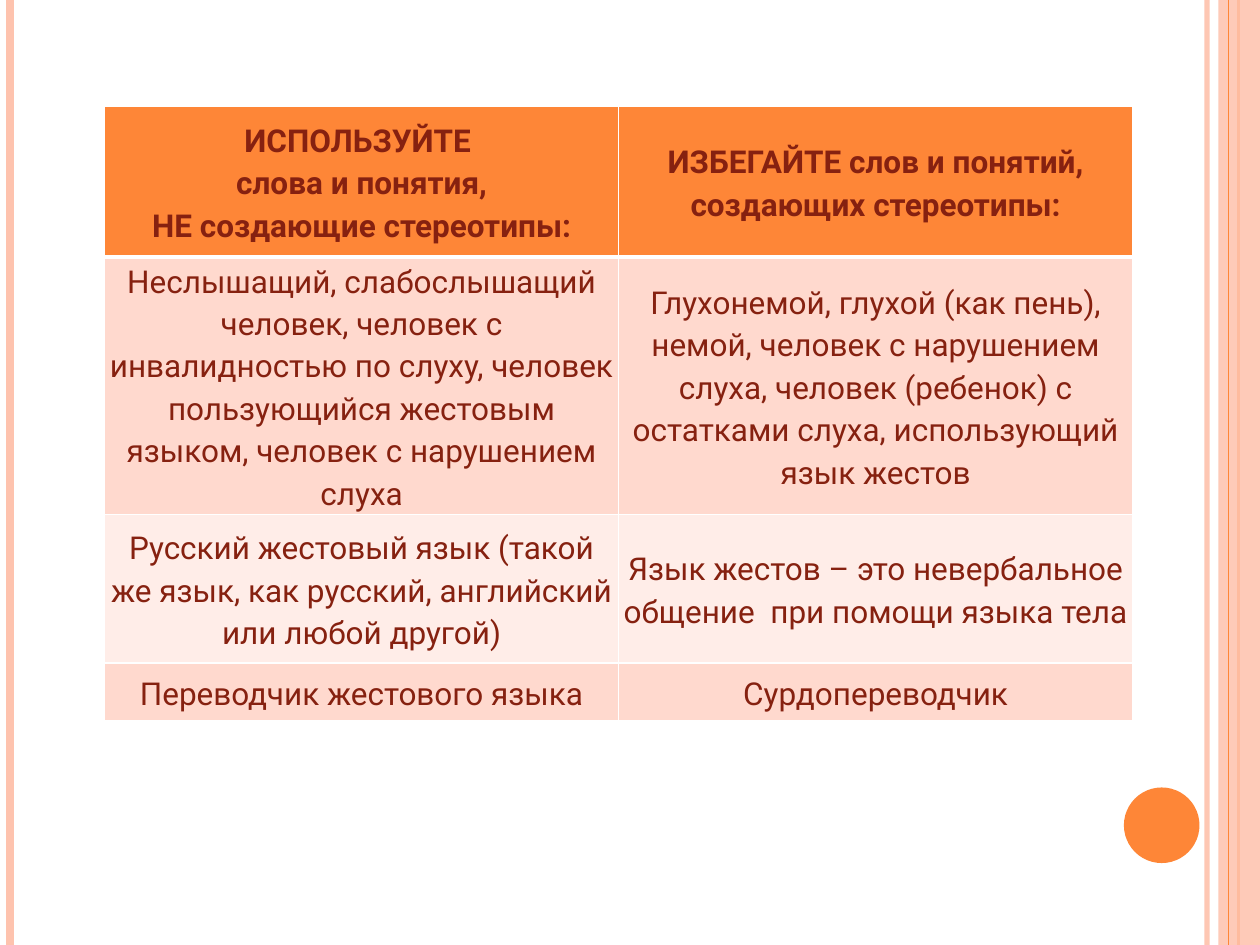
from lxml import etree
from pptx import Presentation
from pptx.dml.color import RGBColor
from pptx.enum.shapes import MSO_CONNECTOR, MSO_SHAPE
from pptx.enum.text import MSO_ANCHOR, PP_ALIGN
from pptx.oxml.ns import qn
from pptx.util import Inches, Pt

STRAIGHT = MSO_CONNECTOR.STRAIGHT
RECTANGLE = MSO_SHAPE.RECTANGLE
OVAL = MSO_SHAPE.OVAL
MIDDLE = MSO_ANCHOR.MIDDLE
CENTER = PP_ALIGN.CENTER

WIDTH, HEIGHT = 10, 7.5
COLORS = {
    "accent": "FE8637",
    "stripe": "FEC3AE",
    "text": "862110",
    "band": "FFD9CE",
    "pale": "FFEDE8",
    "border": "FFFFFF",
}
CELL_FORMAT = {
    "vertical_anchor": MIDDLE,
    "margin_left": Inches(0.01),
    "margin_right": Inches(0.01),
    "margin_top": Inches(0.01),
    "margin_bottom": Inches(0.01),
}
PARAGRAPH_FORMAT = {"alignment": CENTER, "line_spacing": 1.15}
FONT_FORMAT = {"name": "Roboto", "size": Pt(18)}

ROW_HEIGHTS = [1.2, 1.97, 1.18, 0.46]
ROW_FILLS = ["accent", "band", "pale", "band"]
ROWS = [
    (
        ["ИСПОЛЬЗУЙТЕ ", "слова и понятия,\nНЕ создающие стереотипы:"],
        ["ИЗБЕГАЙТЕ слов и понятий,\nсоздающих стереотипы:"],
    ),
    (
        ["Неслышащий, слабослышащий человек, человек с инвалидностью по слуху, "
         "человек пользующийся жестовым языком, человек с нарушением слуха"],
        ["Глухонемой, глухой (как пень), немой, человек с нарушением слуха, "
         "человек (ребенок) с остатками слуха, использующий язык жестов"],
    ),
    (
        ["Русский жестовый язык (такой же язык, как русский, английский или любой другой)"],
        ["Язык жестов – это невербальное общение  при помощи языка тела"],
    ),
    (["Переводчик жестового языка"], ["Сурдопереводчик"]),
]


def color(name):
    """Return the named palette colour."""
    return RGBColor.from_string(COLORS[name])


def apply_format(target, values):
    """Set every attribute of target from a dict."""
    for name, value in values.items():
        setattr(target, name, value)


def set_opacity(shape, percent):
    """Make the solid colours of a shape partly transparent."""
    for element in shape._element.spPr.iter(qn("a:srgbClr")):
        etree.SubElement(element, qn("a:alpha"), val=str(percent * 1000))


def add_stripe(slide, left, weight, color_name, opacity=100):
    """Draw a vertical line over the whole height of the slide."""
    line = slide.shapes.add_connector(
        STRAIGHT, Inches(left), 0, Inches(left), Inches(HEIGHT))
    line.line.color.rgb = color(color_name)
    line.line.width = Pt(weight)
    etree.SubElement(line._element.spPr, qn("a:effectLst"))
    if opacity < 100:
        set_opacity(line, opacity)


def add_block(slide, kind, box, color_name, opacity=100):
    """Draw a filled shape without outline."""
    shape = slide.shapes.add_shape(kind, *map(Inches, box))
    shape.shadow.inherit = False
    shape.fill.solid()
    shape.fill.fore_color.rgb = color(color_name)
    shape.line.fill.background()
    if opacity < 100:
        set_opacity(shape, opacity)


def set_borders(cell, weights):
    """Draw the cell borders, with weights in points by side."""
    properties = cell._tc.get_or_add_tcPr()
    for side, weight in weights.items():
        border = etree.SubElement(properties, qn(f"a:ln{side}"), w=str(Pt(weight)))
        fill = etree.SubElement(border, qn("a:solidFill"))
        etree.SubElement(fill, qn("a:srgbClr"), val=COLORS["border"])


def fill_cell(cell, texts, fill_name, row):
    """Write and format one table cell."""
    is_header = row == 0
    set_borders(cell, {"L": 1, "R": 1, "T": 3 if row == 1 else 1, "B": 3 if is_header else 1})
    apply_format(cell, CELL_FORMAT)
    cell.fill.solid()
    cell.fill.fore_color.rgb = color(fill_name)
    frame = cell.text_frame
    for index, text in enumerate(texts):
        paragraph = frame.add_paragraph() if index else frame.paragraphs[0]
        paragraph.text = text
        apply_format(paragraph, PARAGRAPH_FORMAT)
        for run in paragraph.runs:
            apply_format(run.font, {**FONT_FORMAT, "bold": is_header})
            run.font.color.rgb = color("text")


def add_word_table(slide, left, top, width):
    """Add the table of recommended and discouraged words."""
    table = slide.shapes.add_table(
        len(ROWS), len(ROWS[0]), Inches(left), Inches(top),
        Inches(width), Inches(sum(ROW_HEIGHTS))).table
    for row, (height, fill_name, cells) in enumerate(zip(ROW_HEIGHTS, ROW_FILLS, ROWS)):
        table.rows[row].height = Inches(height)
        for column, texts in enumerate(cells):
            fill_cell(table.cell(row, column), texts, fill_name, row)


def main():
    """Build the slide and save it."""
    presentation = Presentation()
    presentation.slide_width = Inches(WIDTH)
    presentation.slide_height = Inches(HEIGHT)
    slide = presentation.slides.add_slide(presentation.slide_layouts[6])
    add_stripe(slide, 9.58, 3, "stripe", 93)
    add_stripe(slide, 0.08, 4.5, "stripe")
    add_stripe(slide, 9.83, 1.5, "accent")
    add_block(slide, RECTANGLE, (9.67, 0, WIDTH - 9.67, HEIGHT), "stripe", 87)
    add_stripe(slide, 9.75, 0.75, "accent")
    add_block(slide, OVAL, (8.92, 6.25, 0.6, 0.6), "accent")
    add_word_table(slide, 0.83, 0.84, 8.16)
    presentation.save("out.pptx")


if __name__ == "__main__":
    main()
